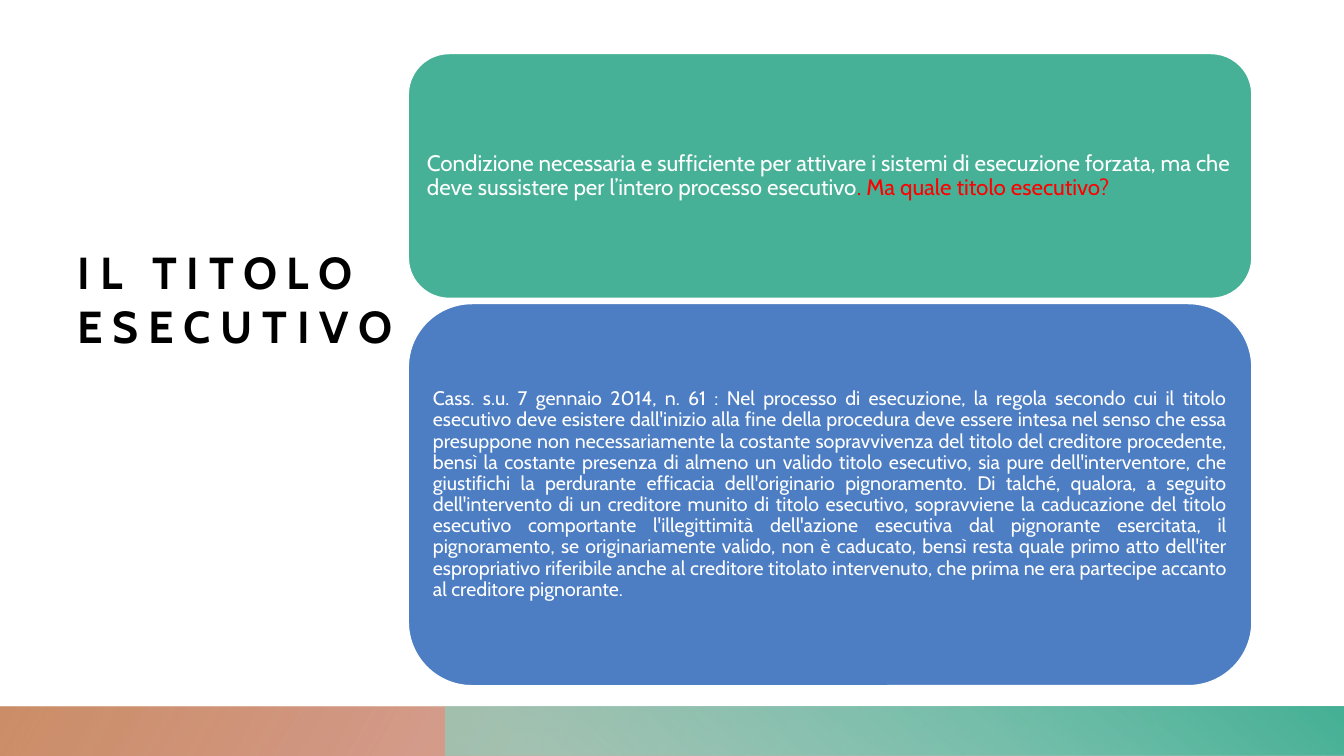
from dataclasses import dataclass

from lxml import etree
from pptx import Presentation
from pptx import util as u
from pptx.dml.color import RGBColor
from pptx.enum import shapes, text
from pptx.oxml.ns import qn


@dataclass(frozen=True)
class Theme:
    font: str = "Cabin"
    white: str = "FFFFFF"
    black: str = "000000"
    red: str = "FF0000"
    green: str = "46B196"
    mint: str = "8ED2C1"
    blue: str = "4D7EC3"
    crimson: str = "B13B3E"
    orange: str = "C37B4D"
    title_size: int = 32
    premise_size: int = 16
    ruling_size: int = 14


def write(frame, runs, size, inset=0, bold=False, spacing=0, line_spacing=1.0,
          align=text.PP_ALIGN.LEFT, font=Theme.font):
    """Fill a text frame with one paragraph of (wording, colour) runs; inset in cm."""
    frame.word_wrap = True
    frame.vertical_anchor = text.MSO_ANCHOR.MIDDLE
    frame.margin_left = frame.margin_right = u.Cm(inset)
    frame.margin_top = frame.margin_bottom = u.Cm(inset)
    paragraph = frame.paragraphs[0]
    paragraph.alignment = align
    paragraph.line_spacing = line_spacing
    for wording, colour in runs:
        run = paragraph.add_run()
        run.text = wording
        run.font.name = font
        run.font.size = u.Pt(size)
        run.font.bold = bold
        run.font.color.rgb = RGBColor.from_string(colour)
        if spacing:
            run.font._element.set("spc", str(spacing * 100))


class SlideBuilder:
    def __init__(self, slide, theme):
        self.slide = slide
        self.theme = theme

    def shape(self, kind, box):
        shape = self.slide.shapes.add_shape(kind, *map(u.Cm, box))
        shape.shadow.inherit = False
        return shape

    def title(self, wording, box):
        title = self.slide.shapes.add_textbox(*map(u.Cm, box))
        write(title.text_frame, [(wording, self.theme.black)],
              self.theme.title_size, bold=True, spacing=7)

    def card(self, box, colour, runs, size, **style):
        card = self.shape(shapes.MSO_SHAPE.ROUNDED_RECTANGLE, box)
        card.fill.solid()
        card.fill.fore_color.rgb = RGBColor.from_string(colour)
        card.line.color.rgb = RGBColor.from_string(self.theme.white)
        card.line.width = u.Pt(1)
        write(card.text_frame, runs, size, line_spacing=0.9, **style)

    def band(self, box, stops, angle, rotation=0):
        """Mirrored gradient bar; stops are (position %, colour, opacity %)."""
        band = self.shape(shapes.MSO_SHAPE.RECTANGLE, box)
        band.line.fill.background()
        band.rotation = rotation
        properties = band.element.spPr
        properties.find(qn("a:xfrm")).set("flipH", "1")
        gradient = etree.Element(qn("a:gradFill"), rotWithShape="1")
        stop_list = etree.SubElement(gradient, qn("a:gsLst"))
        for position, colour, opacity in stops:
            stop = etree.SubElement(stop_list, qn("a:gs"), pos=str(position * 1000))
            shade = etree.SubElement(stop, qn("a:srgbClr"), val=colour)
            etree.SubElement(shade, qn("a:alpha"), val=str(opacity * 1000))
        etree.SubElement(gradient, qn("a:lin"), ang=str(angle * 60000), scaled="0")
        properties.find(qn("a:prstGeom")).addnext(gradient)


PREMISE = ("Condizione necessaria e sufficiente per attivare i sistemi di esecuzione "
           "forzata, ma che deve sussistere per l’intero processo esecutivo")
QUESTION = ". Ma quale titolo esecutivo?"
RULING_SENTENCES = (
    "Cass. s.u. 7 gennaio 2014, n. 61 : Nel processo di esecuzione, la regola secondo "
    "cui il titolo esecutivo deve esistere dall'inizio alla fine della procedura deve "
    "essere intesa nel senso che essa presuppone non necessariamente la costante "
    "sopravvivenza del titolo del creditore procedente, bensì la costante presenza di "
    "almeno un valido titolo esecutivo, sia pure dell'interventore, che giustifichi la "
    "perdurante efficacia dell'originario pignoramento.",
    "Di talché, qualora, a seguito dell'intervento di un creditore munito di titolo "
    "esecutivo, sopravviene la caducazione del titolo esecutivo comportante "
    "l'illegittimità dell'azione esecutiva dal pignorante esercitata, il pignoramento, "
    "se originariamente valido, non è caducato, bensì resta quale primo atto dell'iter "
    "espropriativo riferibile anche al creditore titolato intervenuto, che prima ne era "
    "partecipe accanto al creditore pignorante.",
)
SLIDE_WIDTH, SLIDE_HEIGHT = 33.87, 19.05
BAND_HEIGHT = 1.24
GREEN_LEFT = 11.23
CARD_LEFT, CARD_WIDTH = 10.29, 21.26


def main():
    theme = Theme()
    deck = Presentation()
    deck.slide_width, deck.slide_height = u.Cm(SLIDE_WIDTH), u.Cm(SLIDE_HEIGHT)
    builder = SlideBuilder(deck.slides.add_slide(deck.slide_layouts[6]), theme)

    builder.title("IL TITOLO ESECUTIVO", (1.96, 2.26, 8.79, 10.54))

    band_top = SLIDE_HEIGHT - BAND_HEIGHT
    builder.band((0, band_top, SLIDE_WIDTH, BAND_HEIGHT),
                 [(14, theme.crimson, 28), (100, theme.orange, 85)],
                 angle=150, rotation=180)
    builder.band((GREEN_LEFT, band_top, SLIDE_WIDTH - GREEN_LEFT, BAND_HEIGHT),
                 [(9, theme.mint, 68), (99, theme.green, 100)], angle=230)

    builder.card((CARD_LEFT, 1.35, CARD_WIDTH, 6.17), theme.green,
                 [(PREMISE, theme.white), (QUESTION, theme.red)],
                 theme.premise_size, inset=0.17)
    builder.card((CARD_LEFT, 7.65, CARD_WIDTH, 9.63), theme.blue,
                 [(" ".join(RULING_SENTENCES), theme.white)], theme.ruling_size,
                 inset=0.15, align=text.PP_ALIGN.JUSTIFY)

    deck.save("out.pptx")


if __name__ == "__main__":
    main()
